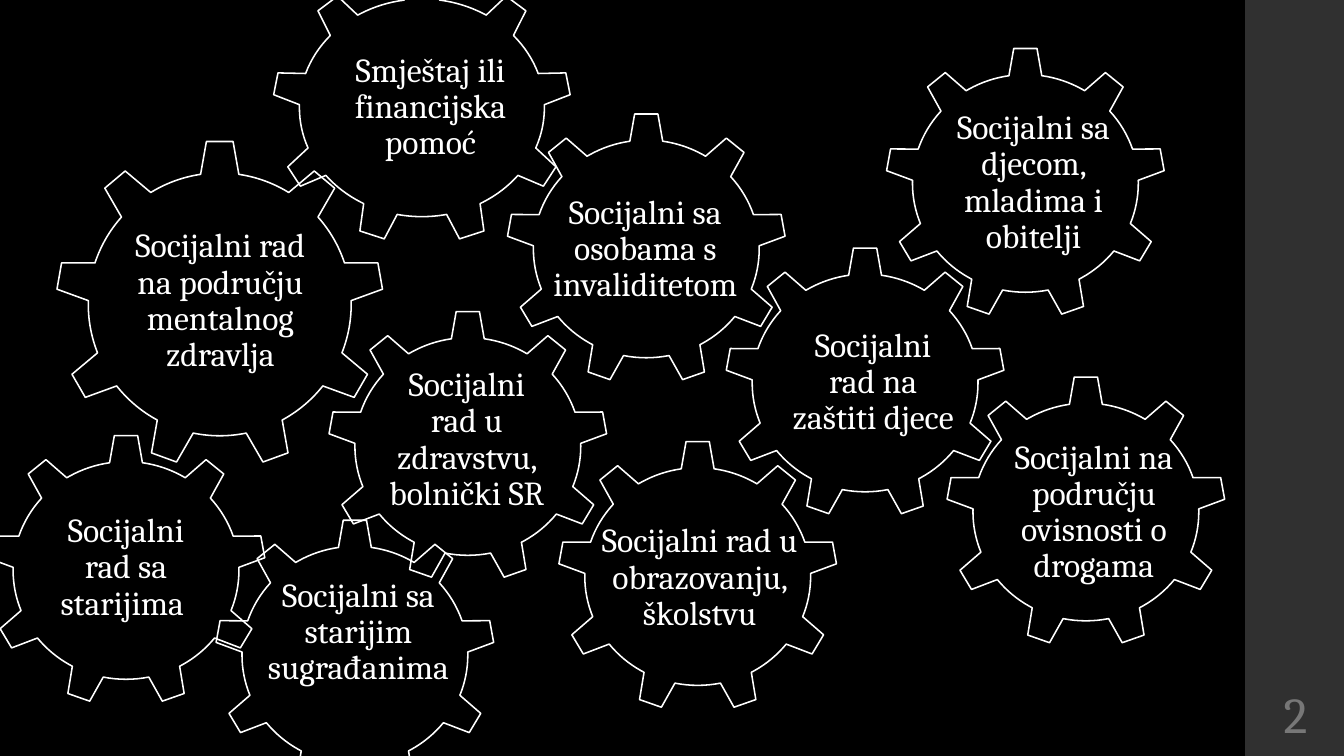
from lxml.etree import SubElement
from pptx import Presentation
from pptx.dml.color import RGBColor
from pptx.enum.shapes import MSO_SHAPE as Shape
from pptx.enum.text import MSO_ANCHOR as Anchor, PP_ALIGN as Align
from pptx.oxml.ns import qn
from pptx.util import Inches, Pt


def color(hex):
    return RGBColor.from_string(hex)


def label(box, text, size, hue, inset):
    """Add a centred, wrapped text box and return its paragraph."""
    frame = slide.shapes.add_textbox(*map(Inches, box)).text_frame
    frame.word_wrap = True
    frame.vertical_anchor = Anchor.MIDDLE
    frame.margin_left = frame.margin_right = Inches(inset)
    frame.margin_top = frame.margin_bottom = Inches(inset)
    frame.text = text
    para = frame.paragraphs[0]
    para.alignment = Align.CENTER
    font = para.runs[0].font
    font.name, font.size = "Cambria", Pt(size)
    font.color.rgb = color(hue)
    return para


deck = Presentation()
deck.slide_width, deck.slide_height = Inches(13.33), Inches(7.5)
slide = deck.slides.add_slide(deck.slide_layouts[6])
slide.background.fill.solid()
slide.background.fill.fore_color.rgb = color("000000")

band = slide.shapes.add_shape(
    Shape.RECTANGLE, Inches(12.35), 0, Inches(1), Inches(7.5))
band.shadow.inherit = False
band.fill.solid()
band.fill.fore_color.rgb = color("303030")
band.line.fill.background()

# Gear: left, top, width, height; label: left, top, width, height
usual = (2.78, 2.7)
gears = [
    ("Socijalni rad sa starijima ", (-0.14, 4.31, *usual), (0.42, 4.94, 1.66, 1.39)),
    ("Socijalni rad na području mentalnog zdravlja",
     (0.55, 1.39, 3.26, 3.26), (1.21, 2.15, 1.95, 1.68)),
    ("Smještaj ili financijska pomoć", (2.7, -0.28, 2.97, 2.7), (3.3, 0.37, 1.94, 1.39)),
    ("Socijalni sa starijim sugrađanima", (2.13, 5.15, *usual), (2.43, 5.58, 2.25, 1.39)),
    ("Socijalni rad u zdravstvu, bolnički SR",
     (3.25, 3.08, *usual), (3.72, 3.67, 1.82, 1.39)),
    ("Socijalni sa osobama s invaliditetom",
     (5.02, 1.12, *usual), (5.29, 1.78, 2.22, 1.39)),
    ("Socijalni rad u obrazovanju, školstvu",
     (5.53, 4.37, *usual), (5.84, 5.04, 2.2, 1.39)),
    ("Socijalni rad na zaštiti djece", (7.19, 2.45, *usual), (7.75, 3.1, 1.82, 1.39)),
    ("Socijalni sa djecom, mladima i obitelji",
     (8.78, 0.47, *usual), (9.34, 1.12, 1.82, 1.39)),
    ("Socijalni na području ovisnosti o drogama",
     (9.38, 3.73, *usual), (9.94, 4.39, 1.82, 1.39)),
]
for text, place, box in gears:
    gear = slide.shapes.add_shape(Shape.GEAR_9, *map(Inches, place))
    gear.shadow.inherit = False
    gear.fill.background()
    gear.line.color.rgb = color("FFFFFF")
    gear.line.width = Pt(1.1)
    label(box, text, 24, "FFFFFF", 0.07).line_spacing = 0.9

label((12.35, 6.75, 1, 0.65), "2", 36, "777777", 0.05)

deck.save("out.pptx")
